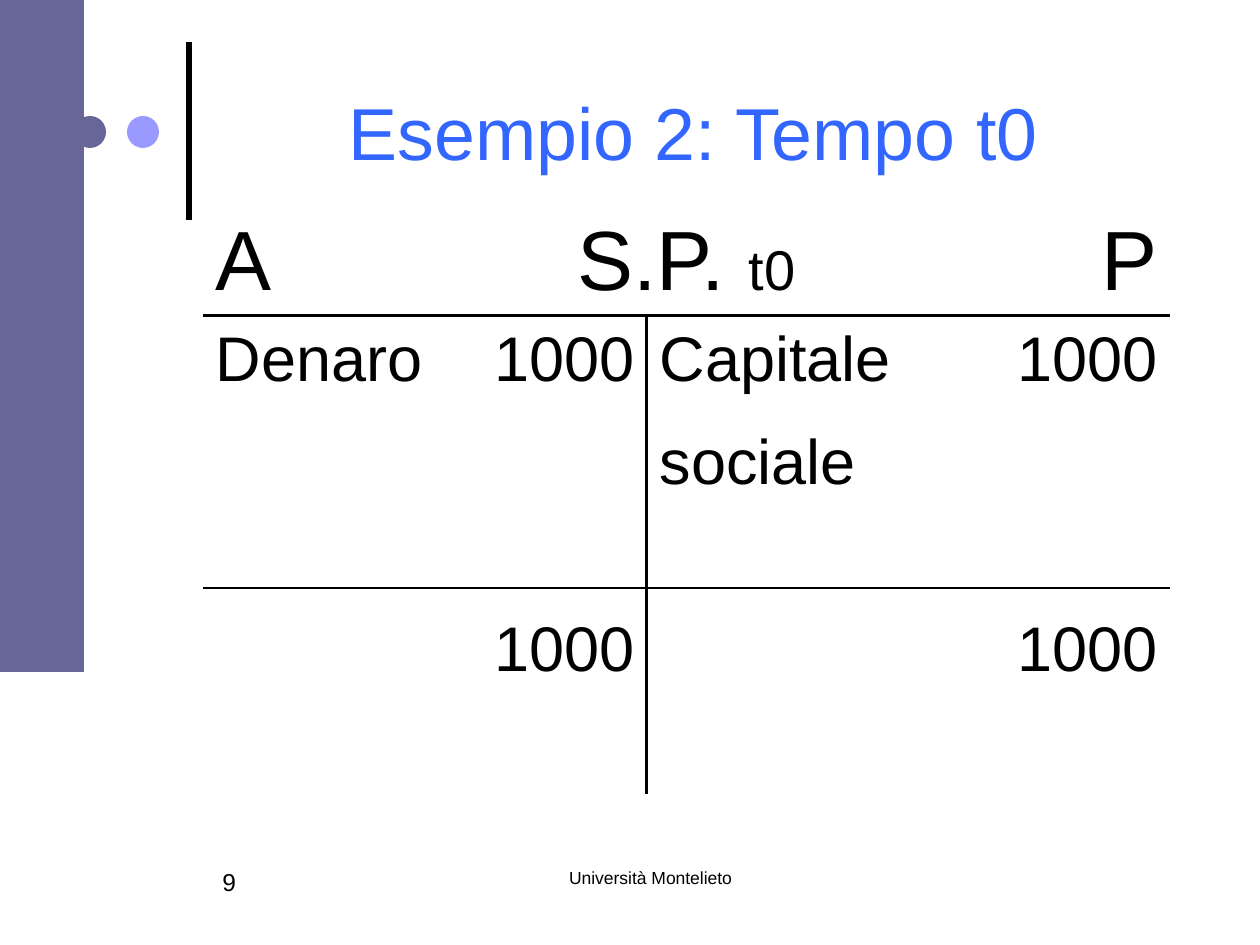
from lxml import etree
from pptx import Presentation
from pptx.dml.color import RGBColor
from pptx.enum.shapes import MSO_CONNECTOR, MSO_SHAPE
from pptx.enum.text import MSO_ANCHOR, PP_ALIGN
from pptx.oxml.ns import qn
from pptx.util import Pt

PX = 914400 // 126
LEFT, CENTER, RIGHT = PP_ALIGN.LEFT, PP_ALIGN.CENTER, PP_ALIGN.RIGHT
BLACK, SLATE, LILAC, BLUE = "000000", "666699", "9999FF", "3366FF"


def write(frame, runs, align, color=BLACK):
    """Fill the first paragraph with (text, size) runs."""
    para = frame.paragraphs[0]
    para.alignment = align
    for text, size in runs:
        span = para.add_run()
        span.text = text
        span.font.name = "Arial"
        span.font.size = Pt(size)
        span.font.color.rgb = RGBColor.from_string(color)


def set_border(cell, side, points):
    """Draw one cell edge in black, or hide it when points is 0."""
    edge = etree.SubElement(cell._tc.get_or_add_tcPr(), qn("a:ln" + side))
    if points:
        edge.set("w", str(Pt(points)))
        fill = etree.SubElement(edge, qn("a:solidFill"))
        etree.SubElement(fill, qn("a:srgbClr")).set("val", BLACK)
    else:
        etree.SubElement(edge, qn("a:noFill"))


deck = Presentation()
deck.slide_width, deck.slide_height = 1260 * PX, 945 * PX
page = deck.slides.add_slide(deck.slide_layouts[5])

# Side decoration
rule = page.shapes.add_connector(
    MSO_CONNECTOR.STRAIGHT, 189 * PX, 220 * PX, 189 * PX, 42 * PX)
rule.line.color.rgb = RGBColor.from_string(BLACK)
rule.line.width = Pt(3)
etree.SubElement(rule._element.spPr, qn("a:effectLst"))

for preset, left, top, width, height, color in (
    (MSO_SHAPE.OVAL, 74, 116, 32, 32, SLATE),
    (MSO_SHAPE.OVAL, 127, 116, 32, 32, LILAC),
    (MSO_SHAPE.RECTANGLE, 0, 0, 84, 672, SLATE),
):
    shape = page.shapes.add_shape(preset, left * PX, top * PX, width * PX, height * PX)
    shape.shadow.inherit = False
    shape.fill.solid()
    shape.fill.fore_color.rgb = RGBColor.from_string(color)
    shape.line.fill.background()

# Footer and page number
for text, size, left, width, align in (
    ("Università Montelieto", 10, 451, 399, CENTER),
    ("9", 14, 210, 179, LEFT),
):
    box = page.shapes.add_textbox(left * PX, 861 * PX, width * PX, 63 * PX)
    box.text_frame.word_wrap = True
    write(box.text_frame, [(text, size)], align)

# Title
title = page.shapes.title
title.left, title.top, title.width, title.height = 210 * PX, 26 * PX, 966 * PX, 210 * PX
title.text_frame.vertical_anchor = MSO_ANCHOR.MIDDLE
write(title.text_frame, [("Esempio 2: Tempo t0", 42)], CENTER, BLUE)

# Balance sheet
column_widths = [242, 202, 281, 242]
row_heights = [107, 84, 103, 84, 103, 103]
entries = {
    (0, 0): [("A", 48)],
    (0, 1): [("S.P. ", 48), ("t0", 32)],
    (0, 3): [("P", 48)],
    (1, 0): [("Denaro", 36)],
    (1, 1): [("1000", 36)],
    (1, 2): [("Capitale", 36)],
    (1, 3): [("1000", 36)],
    (2, 2): [("sociale", 36)],
    (4, 1): [("1000", 36)],
    (4, 3): [("1000", 36)],
}
row_lines = {1: 2, 4: 1}  # line width above each row
frame = page.shapes.add_table(
    len(row_heights), len(column_widths), 203 * PX, 204 * PX,
    sum(column_widths) * PX, sum(row_heights) * PX)
table = frame.table
table.first_row = table.horz_banding = False
for column, width in zip(table.columns, column_widths):
    column.width = width * PX
for row, height in zip(table.rows, row_heights):
    row.height = height * PX
table.cell(0, 1).merge(table.cell(0, 2))

for r in range(len(row_heights)):
    for c in range(len(column_widths)):
        cell = table.cell(r, c)
        cell.vertical_anchor = MSO_ANCHOR.BOTTOM
        cell.margin_top = 4 * PX
        set_border(cell, "L", 2 if r and c == 2 else 0)
        set_border(cell, "R", 2 if r and c == 1 else 0)
        set_border(cell, "T", row_lines.get(r, 0))
        set_border(cell, "B", row_lines.get(r + 1, 0))
        cell.fill.background()
        if (r, c) in entries:
            align = CENTER if (r, c) == (0, 1) else RIGHT if c % 2 else LEFT
            write(cell.text_frame, entries[r, c], align)

deck.save("out.pptx")
